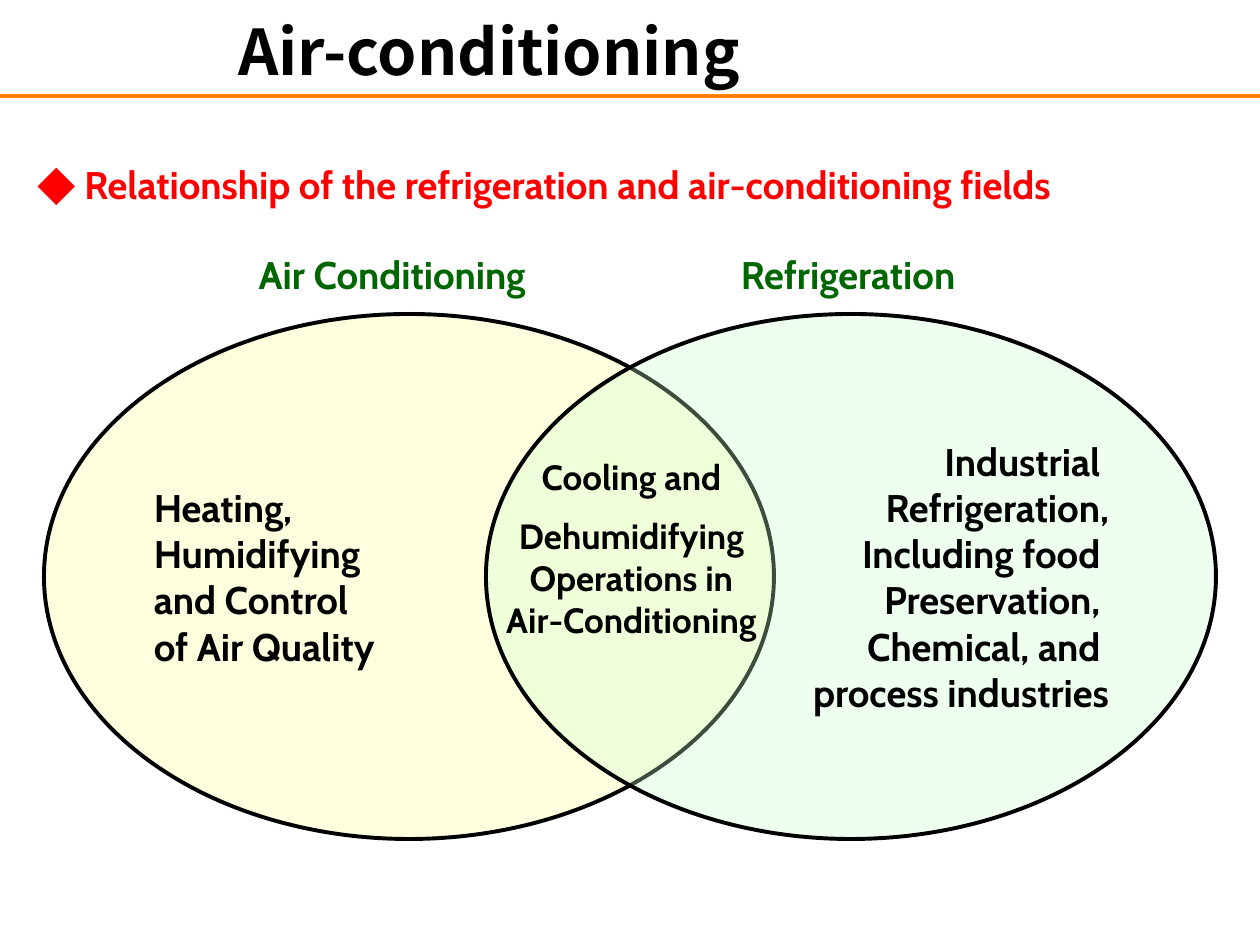
from dataclasses import dataclass

from lxml.etree import SubElement
from pptx import Presentation
from pptx.dml.color import RGBColor
from pptx.enum.shapes import MSO_CONNECTOR, MSO_SHAPE
from pptx.enum.text import MSO_ANCHOR, PP_ALIGN
from pptx.oxml.ns import qn
from pptx.util import Emu, Pt

PX_PER_INCH = 126


def px(length):
    return Emu(round(length * 914400 / PX_PER_INCH))


@dataclass(frozen=True)
class Theme:
    black: str = "000000"
    accent: str = "FF7F00"
    topic: str = "FF0000"
    label: str = "006600"
    air: str = "FFFF99"
    cold: str = "CCFFCC"
    opacity: int = 30
    title_font: str = "Noto Sans CJK KR"
    body_font: str = "Cabin"
    title_size: int = 36
    body_size: int = 22
    overlap_size: int = 20


def write(frame, text, *, font, size, color, align=PP_ALIGN.LEFT,
          anchor=MSO_ANCHOR.TOP, space_before=0, bullet=None, bullet_font=None):
    """Fill a text frame, one paragraph for each line of text."""
    frame.word_wrap = True
    frame.vertical_anchor = anchor
    for index, line in enumerate(text.split("\n")):
        paragraph = frame.add_paragraph() if index else frame.paragraphs[0]
        paragraph.alignment = align
        if index and space_before:
            paragraph.space_before = Pt(space_before)
        if bullet:
            properties = paragraph._p.get_or_add_pPr()
            SubElement(properties, qn("a:buFont"), typeface=bullet_font)
            SubElement(properties, qn("a:buChar"), char=bullet)
        run = paragraph.add_run()
        run.text = line
        run.font.name = font
        run.font.size = Pt(size)
        run.font.bold = True
        run.font.color.rgb = RGBColor.from_string(color)
        # East Asian typeface follows the Latin one
        SubElement(run._r.get_or_add_rPr(), qn("a:ea"), typeface=font)


class VennSlide:
    def __init__(self, deck, theme):
        self.theme = theme
        self.slide = deck.slides.add_slide(deck.slide_layouts[6])

    def text(self, box, text, **style):
        frame = self.slide.shapes.add_textbox(*map(px, box)).text_frame
        write(frame, text, **self.styled(style))

    def ellipse(self, box, text, fill, margin, **style):
        field = self.slide.shapes.add_shape(MSO_SHAPE.OVAL, *map(px, box))
        field.shadow.inherit = False
        field.fill.solid()
        field.fill.fore_color.rgb = RGBColor.from_string(fill)
        color = field._element.spPr.find(qn("a:solidFill"))[0]
        SubElement(color, qn("a:alpha"), val=str(self.theme.opacity * 1000))
        field.line.color.rgb = RGBColor.from_string(self.theme.black)
        field.line.width = Pt(2.25)
        frame = field.text_frame
        frame.margin_left = frame.margin_right = px(margin)
        write(frame, text, anchor=MSO_ANCHOR.MIDDLE, **self.styled(style))

    def rule(self, y, width):
        line = self.slide.shapes.add_connector(
            MSO_CONNECTOR.STRAIGHT, px(0), px(y), px(width), px(y))
        line.line.color.rgb = RGBColor.from_string(self.theme.accent)
        line.line.width = Pt(2)
        SubElement(line._element.spPr, qn("a:effectLst"))

    def styled(self, style):
        return {"font": self.theme.body_font, "size": self.theme.body_size,
                "color": self.theme.black, **style}


def main():
    deck = Presentation()
    deck.slide_width, deck.slide_height = px(1260), px(945)
    theme = Theme()
    venn = VennSlide(deck, theme)

    # Title and rule
    venn.rule(96, 1260)
    venn.text((0, 0, 978, 100), "Air-conditioning", font=theme.title_font,
              size=theme.title_size, align=PP_ALIGN.CENTER,
              anchor=MSO_ANCHOR.MIDDLE)

    # Topic
    venn.text((25, 155, 1234, 59),
              " Relationship of the refrigeration and air-conditioning fields",
              color=theme.topic, bullet="◆", bullet_font=theme.title_font)

    # Overlapping fields
    top, width, height = 314, 730, 525
    venn.ellipse((44, top, width, height),
                 "Heating,\nHumidifying\nand Control\nof Air Quality",
                 theme.air, margin=3)
    venn.ellipse((486, top, width, height),
                 "Industrial \nRefrigeration,\nIncluding food \nPreservation, \n"
                 "Chemical, and \nprocess industries",
                 theme.cold, margin=0, align=PP_ALIGN.RIGHT)
    venn.text((488, 449, 287, 243),
              "Cooling and\nDehumidifying Operations in Air-Conditioning",
              size=theme.overlap_size, align=PP_ALIGN.CENTER, space_before=10)

    # Field labels
    for left, label in ((144, "Air Conditioning"), (600, "Refrigeration")):
        venn.text((left, 245, 496, 59), label, color=theme.label,
                  align=PP_ALIGN.CENTER)

    deck.save("out.pptx")


if __name__ == "__main__":
    main()
